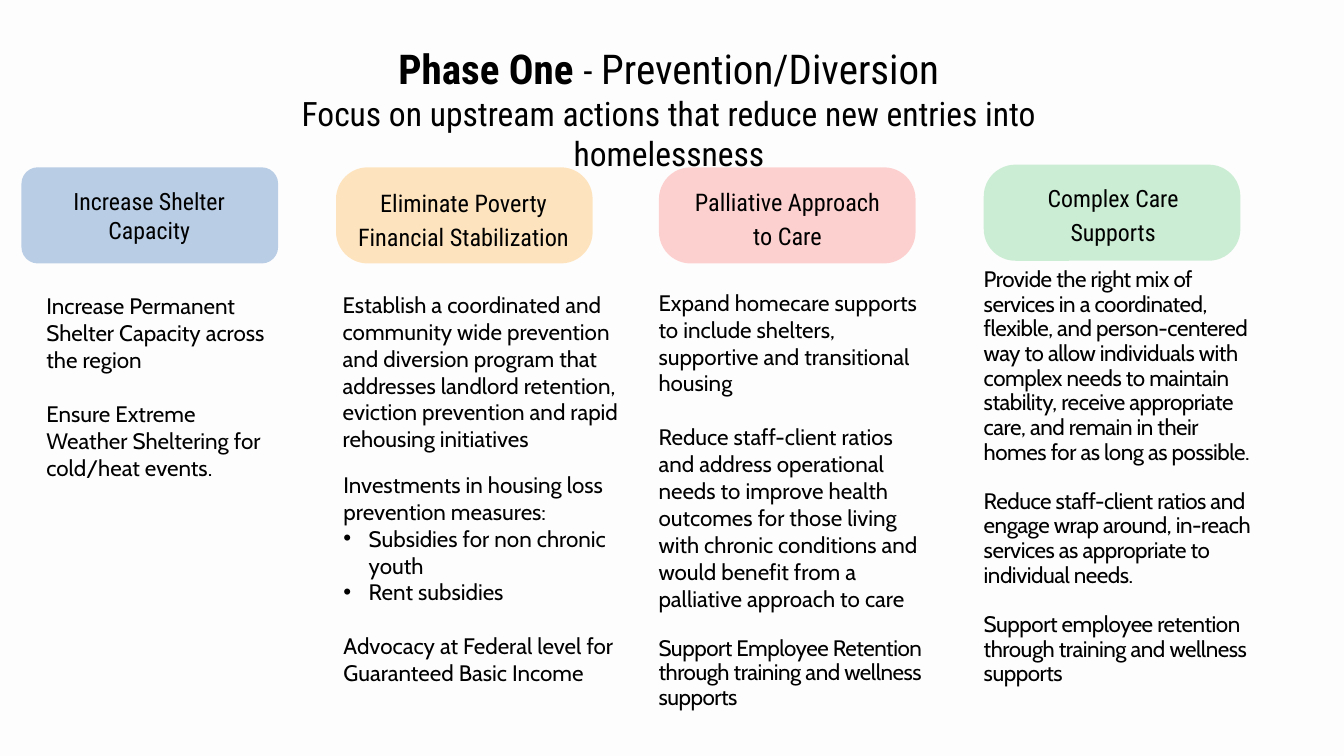
import pptx
import pptx.util
import pptx.dml.color
import pptx.enum.shapes
import pptx.enum.text
import pptx.oxml.ns
import lxml.etree

Pt = pptx.util.Pt
RGBColor = pptx.dml.color.RGBColor
ALIGN = pptx.enum.text.PP_ALIGN

BLACK = RGBColor(0x00, 0x00, 0x00)
PAPER = RGBColor(0xFD, 0xFD, 0xFD)
BLUE = RGBColor(0xB9, 0xCD, 0xE5)
AMBER = RGBColor(0xFE, 0xCD, 0x82)
PINK = RGBColor(0xFE, 0xA5, 0xA4)
GREEN = RGBColor(0x9B, 0xDE, 0xAC)

HEAD = "Roboto Condensed"
BODY = "Cabin"
TEXT = 24
GAP = 28.8
TIGHT = 26.4
LABEL = 36.4


class Deck:
    def __init__(self):
        self.deck = pptx.Presentation()
        self.deck.slide_width = Pt(1440)
        self.deck.slide_height = Pt(810)
        self.slide = self.deck.slides.add_slide(self.deck.slide_layouts[1])
        fill = self.slide.background.fill
        fill.solid()
        fill.fore_color.rgb = PAPER

    def place(self, shape, box):
        shape.left, shape.top, shape.width, shape.height = map(Pt, box)
        frame = shape.text_frame
        frame.word_wrap = True
        frame.auto_size = pptx.enum.text.MSO_AUTO_SIZE.NONE
        frame.vertical_anchor = pptx.enum.text.MSO_ANCHOR.TOP
        frame.margin_left = frame.margin_right = 0
        frame.margin_top = frame.margin_bottom = 0
        return frame

    def style(self, run, font, size, bold=False, tight=False):
        run.font.name = font
        run.font.size = Pt(size)
        run.font.bold = bold
        run.font.color.rgb = BLACK
        if tight:
            run.font._element.set("spc", "-50")

    def title(self, box, parts, sub, lead):
        shape = self.slide.shapes.title
        frame = self.place(shape, box)
        frame.text = "\n".join(["", sub])
        first, last = frame.paragraphs
        for text, size, bold in parts:
            run = first.add_run()
            run.text = text
            self.style(run, HEAD, size, bold)
        first.line_spacing = Pt(lead)
        self.style(last.runs[0], HEAD, 36)
        for para in frame.paragraphs:
            para.alignment = ALIGN.CENTER
        self.slide.shapes._spTree.append(shape._element)

    def panel(self, box, color, round, alpha=None):
        kind = pptx.enum.shapes.MSO_SHAPE.ROUNDED_RECTANGLE
        shape = self.slide.shapes.add_shape(kind, *map(Pt, box))
        shape.adjustments[0] = round
        shape.shadow.inherit = False
        shape.fill.solid()
        shape.fill.fore_color.rgb = color
        shape.line.fill.background()
        if alpha:
            tone = shape._element.spPr.find(".//" + pptx.oxml.ns.qn("a:srgbClr"))
            node = lxml.etree.SubElement(tone, pptx.oxml.ns.qn("a:alpha"))
            node.set("val", str(alpha * 1000))

    def label(self, box, text, size, lead):
        frame = self.place(self.slide.shapes.add_textbox(0, 0, 0, 0), box)
        frame.text = text
        for para in frame.paragraphs:
            para.alignment = ALIGN.CENTER
            if lead:
                para.line_spacing = Pt(lead)
            self.style(para.runs[0], HEAD, size)

    def column(self, box, items, tight=()):
        frame = self.place(self.slide.shapes.add_textbox(0, 0, 0, 0), box)
        frame.text = "\n".join(items)
        for spot, para in enumerate(frame.paragraphs):
            close = spot in tight
            if spot:
                para.space_before = Pt(TIGHT if close else GAP)
            if close:
                para.line_spacing = Pt(TIGHT)
            self.style(para.runs[0], BODY, TEXT, tight=close)

    def list(self, box, items):
        frame = self.place(self.slide.placeholders[1], box)
        frame.text = "\n".join(text for text, mark, gap in items)
        for para, (text, mark, gap) in zip(frame.paragraphs, items):
            props = para._p.get_or_add_pPr()
            props.set("marL", str(Pt(27) if mark else 0))
            props.set("indent", str(Pt(-27) if mark else 0))
            if mark:
                face = lxml.etree.SubElement(props, pptx.oxml.ns.qn("a:buFont"))
                face.set("typeface", "Arial")
                node = lxml.etree.SubElement(props, pptx.oxml.ns.qn("a:buChar"))
                node.set("char", "•")
            else:
                lxml.etree.SubElement(props, pptx.oxml.ns.qn("a:buNone"))
            para.space_before = Pt(gap)
            self.style(para.runs[0], BODY, TEXT)


def main():
    deck = Deck()

    panels = [
        (23, 179.3, BLUE, 0.17, None),
        (360, 179.3, AMBER, 0.33, 50),
        (706, 179.3, PINK, 0.33, 50),
        (1054, 176.4, GREEN, 0.33, 50),
    ]
    for left, top, color, round, alpha in panels:
        deck.panel((left, top, 275, 103), color, round, alpha)

    labels = [
        ((60.5, 200, 199, 62), "Increase Shelter Capacity", 25.5, None),
        ((371.5, 196.5, 250.5, 69), "Eliminate Poverty\nFinancial Stabilization", 26, LABEL),
        ((740, 195.8, 207.5, 69), "Palliative Approach to Care", 26, LABEL),
        ((1089.4, 191.5, 206.6, 69), "Complex Care Supports", 25.5, LABEL),
    ]
    for box, text, size, lead in labels:
        deck.label(box, text, size, lead)

    deck.column((49.7, 313.2, 241, 204), [
        "Increase Permanent Shelter Capacity across the region",
        "Ensure Extreme Weather Sheltering for cold/heat events.",
    ])
    deck.column((367.2, 311.8, 319.7, 174), [
        "Establish a coordinated and community wide prevention and diversion program "
        "that addresses landlord retention, eviction prevention and rapid rehousing initiatives",
    ])
    deck.list((368, 504.7, 316, 285), [
        ("Investments in housing loss prevention measures:", False, 0),
        ("Subsidies for non chronic youth", True, 0),
        ("Rent subsidies", True, 0),
        ("Advocacy at Federal level for Guaranteed Basic Income", False, GAP),
    ])
    deck.column((705.6, 309.6, 293, 490), [
        "Expand homecare supports to include shelters, supportive and transitional housing",
        "Reduce staff-client ratios and address operational needs to improve health outcomes "
        "for those living with chronic conditions and would benefit from a palliative approach to care",
        "Support Employee Retention through training and wellness supports",
    ], tight=(2,))
    deck.column((1054, 286.6, 296.6, 499), [
        "Provide the right mix of services in a coordinated, flexible, and person-centered way "
        "to allow individuals with complex needs to maintain stability, receive appropriate care, "
        "and remain in their homes for as long as possible.",
        "Reduce staff-client ratios and engage wrap around, in-reach services as appropriate "
        "to individual needs.",
        "Support employee retention through training and wellness supports",
    ], tight=(0, 1, 2))

    deck.title(
        (224, 8.6, 985.7, 135.4),
        [("Phase One ", 44, True), ("- ", 40, False), ("Prevention/Diversion", 44, False)],
        "Focus on upstream actions that reduce new entries into homelessness",
        91,
    )
    deck.deck.save("out.pptx")


if __name__ == "__main__":
    main()
